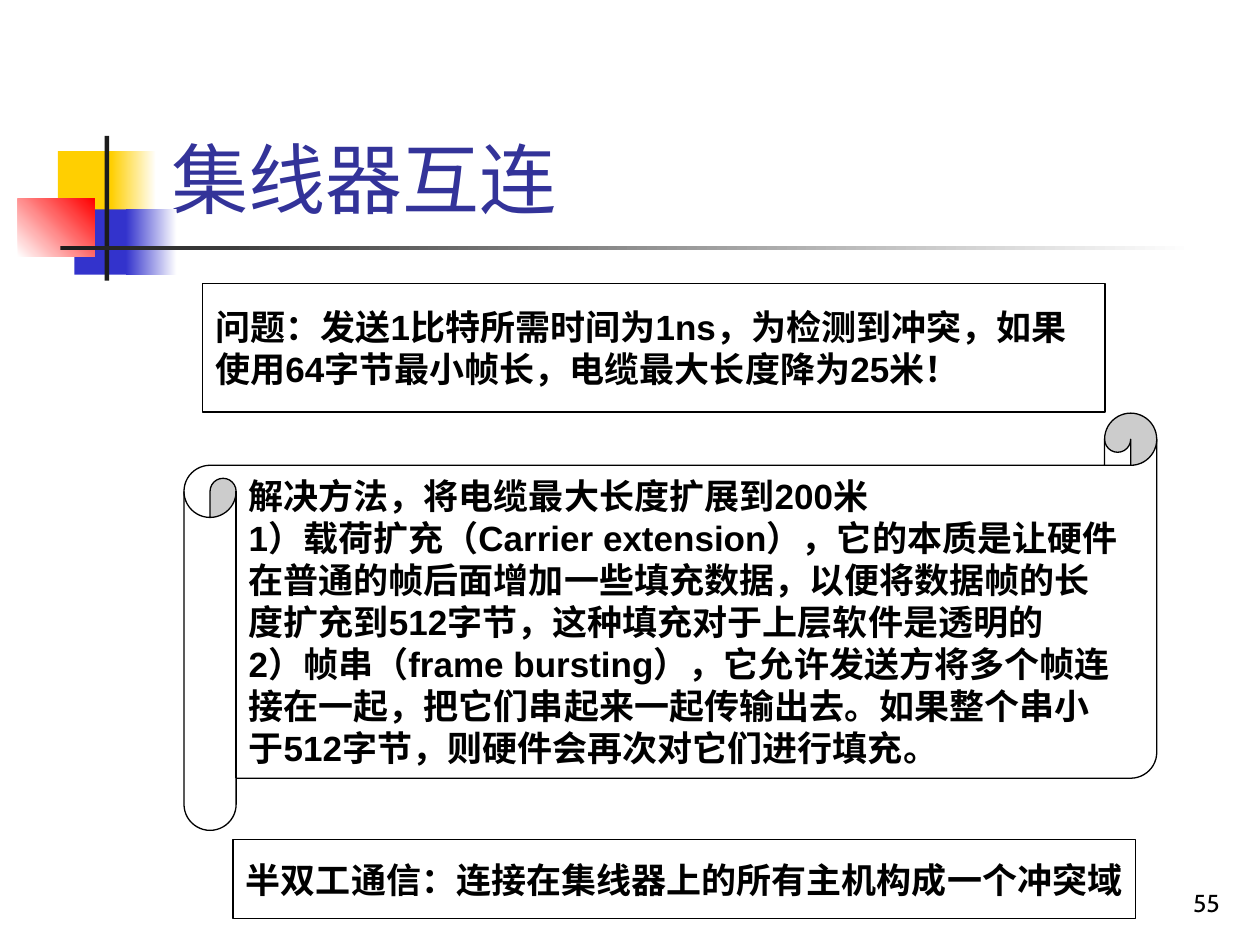
import pptx
import pptx.util
import pptx.dml.color
import pptx.enum.shapes
import pptx.enum.text

Cm = pptx.util.Cm
RGBColor = pptx.dml.color.RGBColor
Shape = pptx.enum.shapes.MSO_SHAPE
Align = pptx.enum.text.PP_ALIGN
Anchor = pptx.enum.text.MSO_ANCHOR

YELLOW = RGBColor(0xFF, 0xCF, 0x01)
BLUE = RGBColor(0x33, 0x33, 0xCC)
RED = RGBColor(0xFF, 0x00, 0x00)
CHARCOAL = RGBColor(0x1C, 0x1C, 0x1C)
TITLE_BLUE = RGBColor(0x33, 0x33, 0x99)
BLACK = RGBColor(0x00, 0x00, 0x00)
WHITE = RGBColor(0xFF, 0xFF, 0xFF)

PROBLEM = ["问题：发送1比特所需时间为1ns，为检测到冲突，如果使用64字节最小帧长，电缆最大长度降为25米！"]
SOLUTION = [
    "解决方法，将电缆最大长度扩展到200米",
    "1）载荷扩充（Carrier extension），它的本质是让硬件在普通的帧后面增加一些填充数据，"
    "以便将数据帧的长度扩充到512字节，这种填充对于上层软件是透明的",
    "2）帧串（frame bursting），它允许发送方将多个帧连接在一起，把它们串起来一起传输出去。"
    "如果整个串小于512字节，则硬件会再次对它们进行填充。",
]
HALF_DUPLEX = ["半双工通信：连接在集线器上的所有主机构成一个冲突域"]


def write_text(frame, lines, size, font_name, color, bold=False, align=Align.LEFT):
    frame.text = "\n".join(lines)
    for para in frame.paragraphs:
        para.alignment = align
        para.font.size = pptx.util.Pt(size)
        para.font.name = font_name
        para.font.bold = bold
        para.font.color.rgb = color


def add_block(page, box, first, last=None, angle=0):
    """Borderless rectangle, plain or fading from first to last."""
    block = page.shapes.add_shape(Shape.RECTANGLE, *map(Cm, box))
    block.shadow.inherit = False
    block.line.fill.background()
    if last is None:
        block.fill.solid()
        block.fill.fore_color.rgb = first
    else:
        block.fill.gradient()
        block.fill.gradient_angle = angle
        for stop, color in zip(block.fill.gradient_stops, (first, last)):
            stop.color.rgb = color


def add_ornament(page, left, top):
    """Coloured squares crossed by a vertical bar and a fading rule."""
    blocks = [
        ((0.81, 0.31, 1.22, 1.32), YELLOW),
        ((1.88, 0.31, 0.91, 1.32), YELLOW, WHITE),
        ((1.14, 1.48, 1.17, 1.32), BLUE),
        ((2.18, 1.48, 1.02, 1.32), BLUE, WHITE),
        ((0, 1.27, 1.55, 1.17), WHITE, RED, 45),
        ((1.75, 0, 0.09, 2.92), CHARCOAL),
        ((0.86, 2.21, 22.86, 0.09), CHARCOAL, WHITE),
    ]
    for (x, y, width, height), *colors in blocks:
        add_block(page, (left + x, top + y, width, height), *colors)


def add_title(page, box, text):
    title = page.shapes.title
    title.left, title.top, title.width, title.height = map(Cm, box)
    title.text_frame.vertical_anchor = Anchor.BOTTOM
    write_text(title.text_frame, [text], 44, "Cabin", TITLE_BLUE)


def add_panel(page, box, lines, kind=Shape.RECTANGLE, wrap=True, align=Align.LEFT):
    """White outlined panel with bold text."""
    panel = page.shapes.add_shape(kind, *map(Cm, box))
    panel.shadow.inherit = False
    panel.fill.solid()
    panel.fill.fore_color.rgb = WHITE
    panel.line.color.rgb = BLACK
    panel.line.width = pptx.util.Pt(0.75)
    panel.text_frame.word_wrap = wrap
    panel.text_frame.vertical_anchor = Anchor.MIDDLE
    write_text(panel.text_frame, lines, 20, "Arial", BLACK, bold=True, align=align)


def add_page_number(page, box, number):
    label = page.shapes.add_textbox(*map(Cm, box))
    label.text_frame.word_wrap = True
    label.text_frame.vertical_anchor = Anchor.BOTTOM
    write_text(label.text_frame, [number], 14, "Cabin", BLACK, align=Align.RIGHT)


def main():
    deck = pptx.Presentation()
    deck.slide_width, deck.slide_height = Cm(25.4), Cm(19.05)
    page = deck.slides.add_slide(deck.slide_layouts[5])

    # Heading
    add_ornament(page, 0.36, 2.74)
    add_title(page, (3.2, 0.58, 21.64, 4.06), "集线器互连")

    # Problem, solution and conclusion
    add_panel(page, (4.09, 5.72, 18.19, 2.59), PROBLEM)
    add_panel(page, (3.71, 8.33, 19.61, 8.41), SOLUTION, Shape.HORIZONTAL_SCROLL)
    add_panel(page, (4.7, 16.92, 18.19, 1.6), HALF_DUPLEX, wrap=False, align=Align.CENTER)

    # Footer
    add_page_number(page, (19.56, 17.35, 5.28, 1.27), "55")

    deck.save("out.pptx")


if __name__ == "__main__":
    main()
